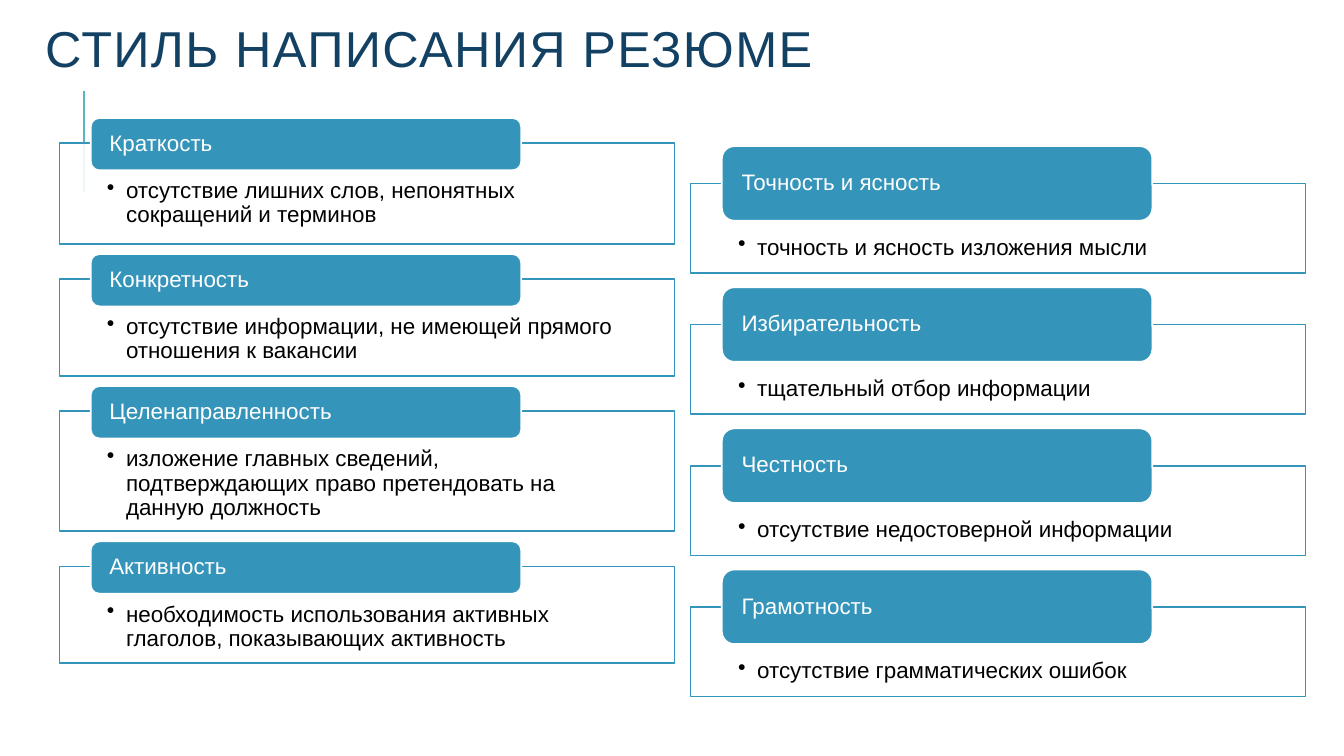
from lxml.etree import SubElement
from pptx import Presentation
from pptx.dml.color import RGBColor
from pptx.enum.shapes import MSO_CONNECTOR, MSO_SHAPE
from pptx.enum.text import MSO_ANCHOR, PP_ALIGN
from pptx.oxml.ns import qn
from pptx.util import Inches, Pt

NAVY = RGBColor(0x13, 0x41, 0x63)
BLUE = RGBColor(0x34, 0x94, 0xBA)
TEAL = RGBColor(0x58, 0xB6, 0xC0)
WHITE = RGBColor(0xFF, 0xFF, 0xFF)
BLACK = RGBColor(0, 0, 0)


def set_text(sp, text, size=16, color=BLACK, anchor=MSO_ANCHOR.MIDDLE,
             insets=(0.1, 0.05, 0.1, 0.05), line_spacing=0.9, spacing=None, bullet=False):
    """Write one paragraph; insets are left, top, right, bottom in inches, spacing is in points."""
    tf = sp.text_frame
    tf.word_wrap = True
    tf.vertical_anchor = anchor
    tf.margin_left, tf.margin_top, tf.margin_right, tf.margin_bottom = map(Inches, insets)
    p = tf.paragraphs[0]
    p.alignment = PP_ALIGN.LEFT
    p.line_spacing = line_spacing
    r = p.add_run()
    r.text = text
    r.font.name = "Arial"
    r.font.size = Pt(size)
    r.font.color.rgb = color
    if spacing:
        r._r.get_or_add_rPr().set("spc", str(spacing * 100))
    if bullet:
        p.level = 1
        pPr = p._p.get_or_add_pPr()
        pPr.set("marL", str(Inches(0.19)))
        pPr.set("indent", str(-Inches(0.19)))
        SubElement(pPr, qn("a:buChar"), char="•")


def add_box(shapes, kind, x, y, w, h, fill, line):
    sp = shapes.add_shape(kind, Inches(x), Inches(y), Inches(w), Inches(h))
    sp.shadow.inherit = False
    sp.fill.solid()
    sp.fill.fore_color.rgb = fill
    sp.line.color.rgb = line
    sp.line.width = Pt(1.25)
    return sp


prs = Presentation()
prs.slide_width = Inches(13.33)
prs.slide_height = Inches(7.5)
s = prs.slides.add_slide(prs.slide_layouts[6])

accent = s.shapes.add_connector(MSO_CONNECTOR.STRAIGHT, Inches(0.83), Inches(1.9),
                                Inches(0.83), Inches(0.9))
accent.line.color.rgb = TEAL
accent.line.width = Pt(1.5)
SubElement(accent._element.spPr, qn("a:effectLst"))

title = s.shapes.add_textbox(Inches(0.35), Inches(0.2), Inches(9), Inches(0.65))
set_text(title, "СТИЛЬ НАПИСАНИЯ РЕЗЮМЕ", size=36, color=NAVY, line_spacing=0.8, spacing=1)

# Column: left, first top, gap between boxes, header rise, header height, text inset, items
columns = [
    (0.59, 1.42, 0.35, 0.25, 0.52, 0.36, [
        ("Краткость", "отсутствие лишних слов, непонятных сокращений и терминов", 1),
        ("Конкретность", "отсутствие информации, не имеющей прямого отношения к вакансии", 0.96),
        ("Целенаправленность", "изложение главных сведений, подтверждающих право "
                               "претендовать на данную должность", 1.19),
        ("Активность", "необходимость использования активных глаголов, "
                       "показывающих активность", 0.96),
    ]),
    (6.85, 1.82, 0.51, 0.37, 0.74, 0.52, [
        ("Точность и ясность", "точность и ясность изложения мысли", 0.89),
        ("Избирательность", "тщательный отбор информации", 0.89),
        ("Честность", "отсутствие недостоверной информации", 0.89),
        ("Грамотность", "отсутствие грамматических ошибок", 0.89),
    ]),
]

for left, top, gap, rise, header_h, inset, items in columns:
    shapes = s.shapes.add_group_shape().shapes
    for name, detail, height in items:
        box = add_box(shapes, MSO_SHAPE.RECTANGLE, left, top, 6.1, height, WHITE, BLUE)
        color = box.fill._xPr.find(qn("a:solidFill"))[0]
        SubElement(color, qn("a:alpha"), val="90000")
        set_text(box, detail, anchor=MSO_ANCHOR.TOP,
                 insets=(0.47, inset, 0.47, 0.12), bullet=True)
        header = add_box(shapes, MSO_SHAPE.ROUNDED_RECTANGLE, left + 0.31, top - rise,
                         4.27, header_h, BLUE, WHITE)
        set_text(header, name, color=WHITE, insets=(0.16, 0, 0.16, 0))
        top += height + gap

prs.save("out.pptx")
